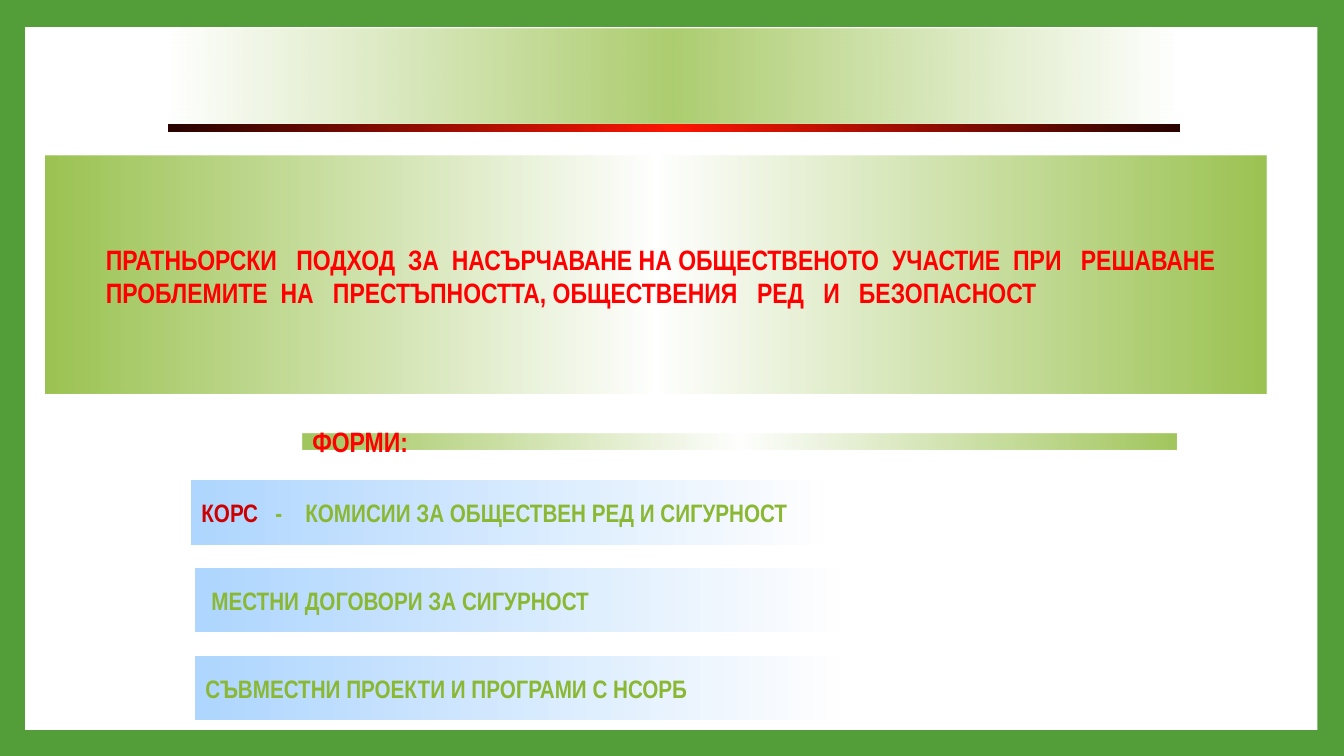
import dataclasses
import pptx
import pptx.util
import pptx.dml.color
import pptx.enum.shapes
import pptx.enum.text
import pptx.oxml.ns
from lxml import etree

Pt = pptx.util.Pt
RGB = pptx.dml.color.RGBColor.from_string
qn = pptx.oxml.ns.qn


@dataclasses.dataclass(frozen=True)
class Theme:
    font: str = "Arial Narrow"
    green: str = "549E39"
    lime: str = "8AB833"
    white: str = "FFFFFF"
    sky: str = "99CCFF"
    red: str = "FF0000"
    dark: str = "CC0000"
    flame: str = "FD1503"
    soot: str = "280300"
    large: int = 20
    small: int = 18
    space: float = 0.228


look = Theme()

HEADING = [
    [("ПРАТНЬОРСКИ", 3), ("ПОДХОД", 2), ("ЗА", 2), ("НАСЪРЧАВАНЕ НА ОБЩЕСТВЕНОТО", 2),
     ("УЧАСТИЕ", 2), ("ПРИ", 3), ("РЕШАВАНЕ", 0)],
    [("ПРОБЛЕМИТЕ", 2), ("НА", 3), ("ПРЕСТЪПНОСТТА, ОБЩЕСТВЕНИЯ", 3),
     ("РЕД", 3), ("И", 3), ("БЕЗОПАСНОСТ", 0)],
]


def blend(shape, stops):
    shape.fill.gradient()
    shape.fill.gradient_angle = 0
    ramp = shape.element.spPr.find(".//" + qn("a:gsLst"))
    for old in list(ramp):
        ramp.remove(old)
    for place, tint, alpha in stops:
        stop = etree.SubElement(ramp, qn("a:gs"), pos=str(place * 1000))
        color = etree.SubElement(stop, qn("a:srgbClr"), val=tint)
        etree.SubElement(color, qn("a:alpha"), val=str(alpha * 1000))


def block(slide, box):
    kind = pptx.enum.shapes.MSO_SHAPE.RECTANGLE
    shape = slide.shapes.add_shape(kind, *map(Pt, box))
    shape.shadow.inherit = False
    shape.line.fill.background()
    return shape


def frame(shape, left=7.2, top=0):
    style = {
        "word_wrap": True,
        "auto_size": pptx.enum.text.MSO_AUTO_SIZE.NONE,
        "vertical_anchor": pptx.enum.text.MSO_ANCHOR.MIDDLE,
        "margin_left": Pt(left),
        "margin_right": Pt(7.2),
        "margin_top": Pt(top),
        "margin_bottom": Pt(0),
    }
    for name, value in style.items():
        setattr(shape.text_frame, name, value)


def write(para, parts, size):
    para.alignment = pptx.enum.text.PP_ALIGN.LEFT
    for words, tint, gap in parts:
        for text, extra in [(words, 0), (" ", gap - 1)][:2 if gap else 1]:
            run = para.add_run()
            run.text = text
            style = {"name": look.font, "size": Pt(size), "bold": True}
            for name, value in style.items():
                setattr(run.font, name, value)
            run.font.color.rgb = RGB(tint)
            if extra:
                run.font._element.set("spc", str(round(extra * size * look.space * 100)))


def stage(slide, box):
    slide.background.fill.solid()
    slide.background.fill.fore_color.rgb = RGB(look.green)
    sheet = block(slide, box)
    sheet.fill.solid()
    sheet.fill.fore_color.rgb = RGB(look.white)


def banner(slide, box):
    x, y, w, h = box
    band = block(slide, (x, y, w, h))
    blend(band, [(0, look.white, 67), (50, look.lime, 70), (100, look.white, 67)])
    rule = block(slide, (x, y + h + 0.7, w + 3, 5.8))
    blend(rule, [(0, look.soot, 100), (50, look.flame, 100), (100, look.soot, 100)])


def heading(slide, box):
    title = slide.shapes.title
    slide.shapes.element.append(title.element)
    for name, value in zip(("left", "top", "width", "height"), box):
        setattr(title, name, Pt(value))
    blend(title, [(0, look.lime, 84), (50, look.white, 84), (100, look.lime, 84)])
    frame(title, left=43.2, top=2)
    for index, line in enumerate(HEADING):
        body = title.text_frame
        para = body.add_paragraph() if index else body.paragraphs[0]
        write(para, [(words, look.red, gap) for words, gap in line], look.large)


def label(slide, box):
    bar = block(slide, box)
    blend(bar, [(0, look.lime, 79), (50, look.white, 81), (100, look.lime, 79)])
    frame(bar)
    write(bar.text_frame.paragraphs[0], [("ФОРМИ:", look.red, 0)], look.large)


def forms(slide, box):
    x, y, w, h = box
    step = 62.65
    rows = [
        (0, 450.7, 7.2, [("КОРС", look.dark, 3), ("-", look.lime, 4),
                         ("КОМИСИИ ЗА ОБЩЕСТВЕН РЕД И СИГУРНОСТ", look.lime, 0)]),
        (2.9, w - 2.9, 11.3, [("МЕСТНИ ДОГОВОРИ ЗА СИГУРНОСТ", look.lime, 0)]),
        (2.9, w - 2.9, 7.2, [("СЪВМЕСТНИ ПРОЕКТИ И ПРОГРАМИ С НСОРБ", look.lime, 0)]),
    ]
    for index, (shift, width, inset, parts) in enumerate(rows):
        row = block(slide, (x + shift, y + index * step, width, h - 2 * step))
        blend(row, [(0, look.sky, 79), (100, look.white, 81)])
        frame(row, left=inset)
        write(row.text_frame.paragraphs[0], parts, look.small)


def main():
    deck = pptx.Presentation()
    deck.slide_width, deck.slide_height = Pt(960), Pt(540)
    slide = deck.slides.add_slide(deck.slide_layouts[5])
    stage(slide, (18, 19.4, 923, 502))
    banner(slide, (120.2, 20.2, 720, 67.7))
    heading(slide, (32.4, 110.9, 872.6, 170))
    label(slide, (216, 309.6, 624.2, 11.5))
    forms(slide, (136.8, 343.4, 462.3, 170.7))
    deck.save("out.pptx")


if __name__ == "__main__":
    main()
